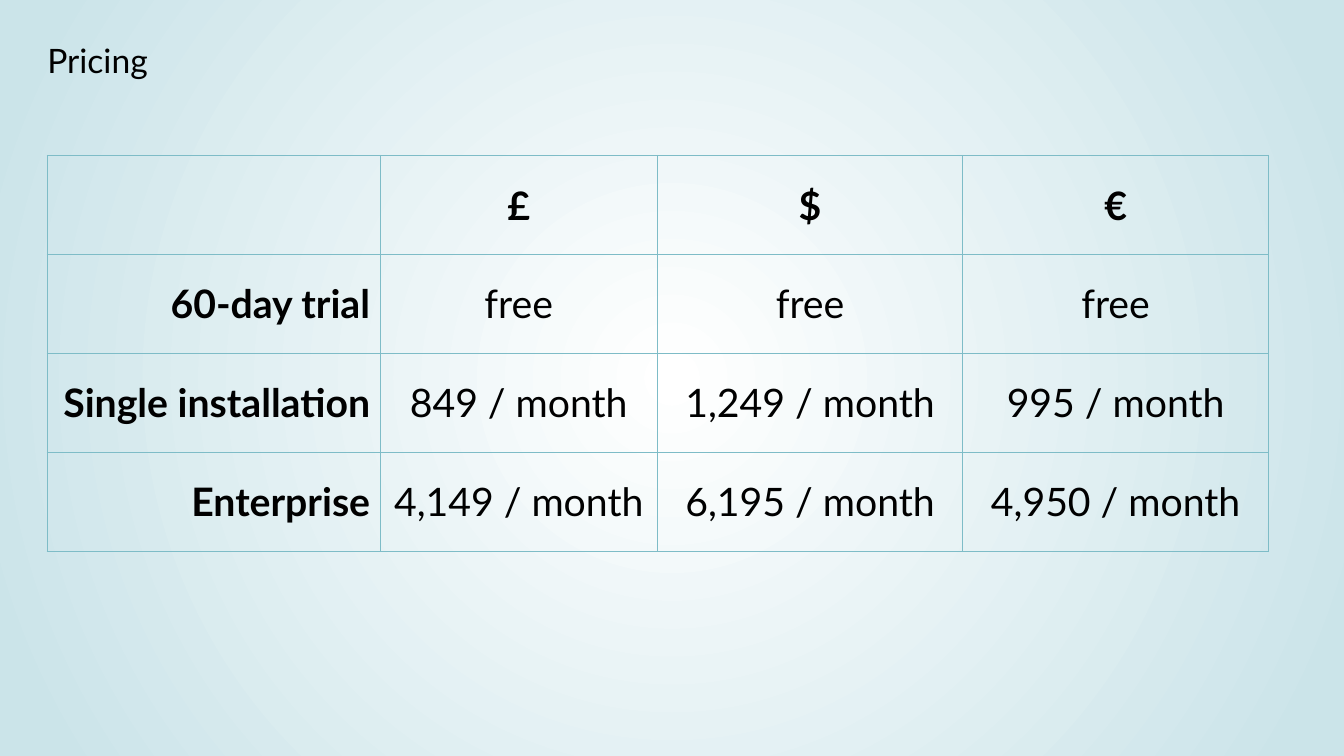
from dataclasses import dataclass

from pptx import Presentation
from pptx.dml.color import RGBColor
from pptx.enum.text import MSO_ANCHOR, PP_ALIGN
from pptx.oxml import parse_xml
from pptx.oxml.ns import nsdecls, qn
from pptx.util import Pt

MIDDLE = MSO_ANCHOR.MIDDLE
LEFT, CENTER, RIGHT = PP_ALIGN.LEFT, PP_ALIGN.CENTER, PP_ALIGN.RIGHT
PX = 9525


@dataclass(frozen=True)
class Theme:
    font: str = "Lato"
    ink: str = "000000"
    border: str = "7EBCC7"
    glow: str = "FFFFFF"
    edge: str = "CBE4E9"
    title_size: int = 24
    cell_size: int = 28
    border_width: int = 1


THEME = Theme()
COLUMN_WIDTHS = [317, 264, 291, 291]
PRICES = [
    ["", "£", "$", "€"],
    ["60-day trial", "free", "free", "free"],
    ["Single installation", "849 / month", "1,249 / month", "995 / month"],
    ["Enterprise", "4,149 / month", "6,195 / month", "4,950 / month"],
]


def px(*lengths):
    return [n * PX for n in lengths]


def style_text(tf, size, align, bold=False):
    p = tf.paragraphs[0]
    p.alignment = align
    for r in p.runs:
        r.font.name = THEME.font
        r.font.size = Pt(size)
        r.font.bold = bold
        r.font.color.rgb = RGBColor.from_string(THEME.ink)


def add_background(s):
    fill = s.background.fill
    fill.gradient()
    stops = zip(fill.gradient_stops, (THEME.glow, THEME.edge), (0, 0.94))
    for stop, color, position in stops:
        stop.color.rgb = RGBColor.from_string(color)
        stop.position = position
    grad = s.element.find(".//" + qn("a:gradFill"))
    grad.replace(grad.find(qn("a:lin")), parse_xml(
        f'<a:path {nsdecls("a")} path="circle">'
        '<a:fillToRect l="50000" t="50000" r="50000" b="50000"/></a:path>'))


def add_title(s, text, x, y, w, h):
    sp = s.shapes.title
    sp.left, sp.top, sp.width, sp.height = px(x, y, w, h)
    tf = sp.text_frame
    tf.text = text
    tf.vertical_anchor = MIDDLE
    tf.margin_left = tf.margin_top = tf.margin_right = tf.margin_bottom = 0
    style_text(tf, THEME.title_size, LEFT)


def add_borders(cell):
    tc_pr = cell._tc.get_or_add_tcPr()
    for i, side in enumerate(("lnL", "lnR", "lnT", "lnB")):
        tc_pr.insert(i, parse_xml(
            f'<a:{side} {nsdecls("a")} w="{Pt(THEME.border_width)}"><a:solidFill>'
            f'<a:srgbClr val="{THEME.border}"/></a:solidFill></a:{side}>'))


def add_price_table(s, rows, widths, x, y, h):
    box = px(x, y, sum(widths), h)
    table = s.shapes.add_table(len(rows), len(widths), *box).table
    table.first_row = table.horz_banding = False
    for column, width in zip(table.columns, px(*widths)):
        column.width = width
    for i, row in enumerate(rows):
        for j, text in enumerate(row):
            cell = table.cell(i, j)
            cell.text = text
            cell.vertical_anchor = MIDDLE
            cell.fill.background()
            add_borders(cell)
            style_text(cell.text_frame, THEME.cell_size,
                       CENTER if j else RIGHT, bold=i == 0 or j == 0)


def add_pricing_slide(prs):
    s = prs.slides.add_slide(prs.slide_layouts[5])
    add_background(s)
    add_title(s, "Pricing", 45, 17, 1189, 80)
    add_price_table(s, PRICES, COLUMN_WIDTHS, 45, 148, 377)


def main():
    prs = Presentation()
    prs.slide_width, prs.slide_height = px(1280, 720)
    add_pricing_slide(prs)
    prs.save("out.pptx")


if __name__ == "__main__":
    main()
